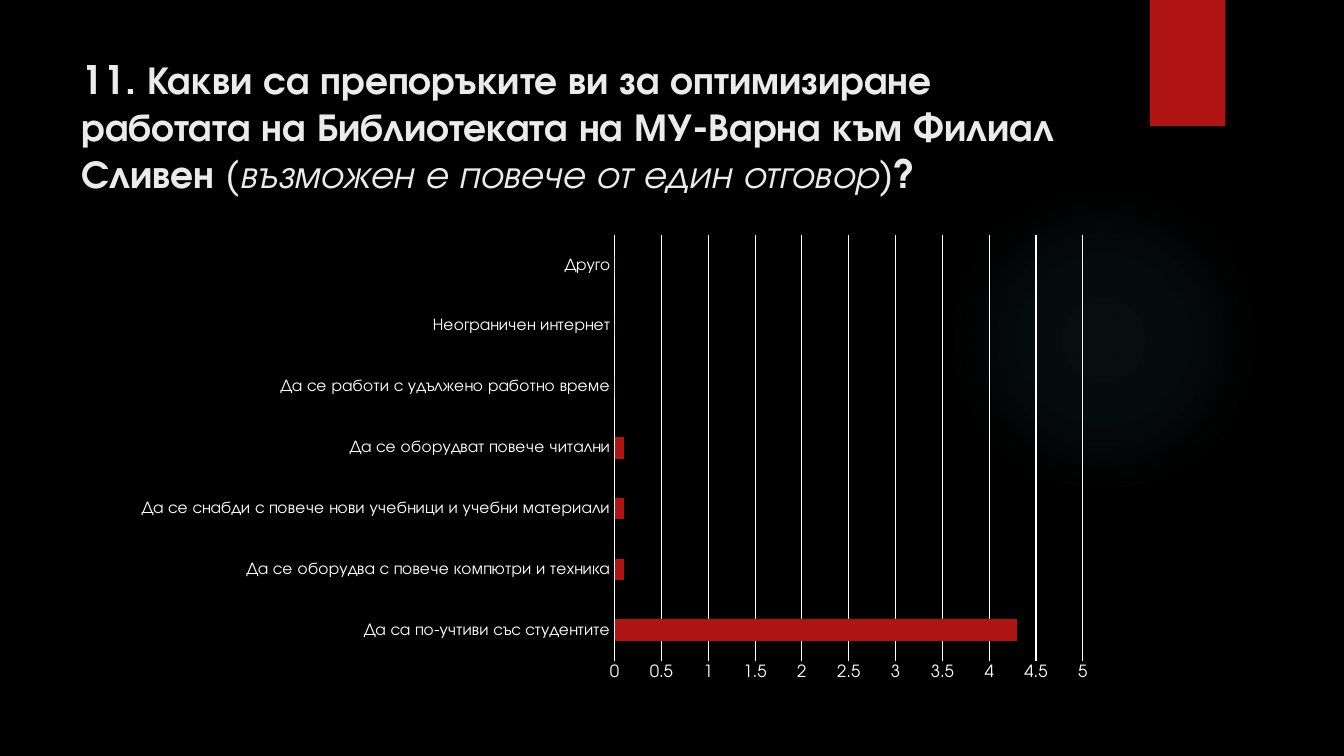
from dataclasses import dataclass

from lxml import etree
from pptx import Presentation
from pptx.chart.data import CategoryChartData
from pptx.dml.color import RGBColor
from pptx.enum.chart import XL_CHART_TYPE, XL_TICK_MARK
from pptx.enum.shapes import MSO_SHAPE
from pptx.enum.text import MSO_ANCHOR, MSO_AUTO_SIZE, PP_ALIGN
from pptx.oxml import parse_xml
from pptx.oxml.ns import nsdecls, qn
from pptx.util import Cm, Pt

BAR_CLUSTERED = XL_CHART_TYPE.BAR_CLUSTERED
NO_TICK = XL_TICK_MARK.NONE
RECTANGLE, OVAL = MSO_SHAPE.RECTANGLE, MSO_SHAPE.OVAL
TOP, LEFT = MSO_ANCHOR.TOP, PP_ALIGN.LEFT
NO_AUTOFIT = MSO_AUTO_SIZE.NONE
TITLE_ONLY = 5


@dataclass(frozen=True)
class Theme:
    background: str = "000000"
    accent: str = "B01513"
    glow: str = "50B9C1"
    title: str = "EBEBEB"
    chart: str = "FFFFFF"
    font: str = "TeX Gyre Adventor"
    title_size: float = 28
    chart_size: float = 12
    line_width: float = 0.75


@dataclass(frozen=True)
class Box:
    left: float
    top: float
    width: float
    height: float

    def lengths(self):
        return Cm(self.left), Cm(self.top), Cm(self.width), Cm(self.height)


@dataclass(frozen=True)
class TitlePart:
    text: str
    bold: bool = False
    italic: bool = False


@dataclass(frozen=True)
class Answer:
    label: str
    value: float


THEME = Theme()
GLOW_BOX = Box(23.9, 4.65, 7.82, 7.82)
RIBBON_BOX = Box(28.98, 0, 1.9, 3.18)
TITLE_BOX = Box(1.8, 1.27, 26.14, 3.89)
CHART_BOX = Box(3.07, 5.69, 24.84, 11.66)
PLOT_LAYOUT = {"x": 0.5, "y": 0.02, "w": 0.475, "h": 0.92}
GLOW_STOPS = ((0, 7), (36, 6), (69, 0))  # position and opacity in percent

TITLE_PARTS = (
    TitlePart("11. Какви са препоръките ви за оптимизиране работата на "
              "Библиотеката на МУ-Варна към Филиал Сливен ", bold=True),
    TitlePart("("),
    TitlePart("възможен е повече от един отговор", italic=True),
    TitlePart(")"),
    TitlePart("?", bold=True),
)
ANSWERS = (
    Answer("Да са по-учтиви със студентите", 4.3),
    Answer("Да се оборудва с повече компютри и техника", 0.1),
    Answer("Да се снабди с повече нови учебници и учебни материали", 0.1),
    Answer("Да се оборудват повече читални", 0.1),
    Answer("Да се работи с удължено работно време", 0),
    Answer("Неограничен интернет", 0),
    Answer("Друго", 0),
)


def format_font(font, *, size: float, color: str, bold=False, italic=False) -> None:
    font.name = THEME.font
    font.size = Pt(size)
    font.bold = bold
    font.italic = italic
    font.color.rgb = RGBColor.from_string(color)


def add_text(paragraph, text: str, **font_format) -> None:
    run = paragraph.add_run()
    run.text = text
    format_font(run.font, **font_format)


def add_plain_shape(slide, kind, box: Box, color: str):
    shape = slide.shapes.add_shape(kind, *box.lengths())
    shape.shadow.inherit = False
    shape.fill.solid()
    shape.fill.fore_color.rgb = RGBColor.from_string(color)
    shape.line.fill.background()
    return shape


def fade_from_center(shape, color: str) -> None:
    stops = "".join(
        f'<a:gs pos="{position * 1000}"><a:srgbClr val="{color}">'
        f'<a:alpha val="{opacity * 1000}"/></a:srgbClr></a:gs>'
        for position, opacity in GLOW_STOPS)
    gradient = parse_xml(
        f'<a:gradFill {nsdecls("a")}><a:gsLst>{stops}</a:gsLst><a:path path="circle">'
        '<a:fillToRect l="50000" t="50000" r="50000" b="50000"/></a:path></a:gradFill>')
    properties = shape._element.spPr
    properties.replace(properties.find(qn("a:solidFill")), gradient)


def format_line(line) -> None:
    line.color.rgb = RGBColor.from_string(THEME.chart)
    line.width = Pt(THEME.line_width)


def place_plot(chart) -> None:
    plot_area = chart._chartSpace.chart.plotArea
    for old_layout in plot_area.findall(qn("c:layout")):
        plot_area.remove(old_layout)
    layout = etree.Element(qn("c:layout"))
    manual = etree.SubElement(layout, qn("c:manualLayout"))
    settings = {"layoutTarget": "inner", "xMode": "edge", "yMode": "edge", **PLOT_LAYOUT}
    for name, value in settings.items():
        etree.SubElement(manual, qn(f"c:{name}")).set("val", str(value))
    plot_area.insert(0, layout)


def fill_title(title) -> None:
    title.left, title.top, title.width, title.height = TITLE_BOX.lengths()
    frame = title.text_frame
    frame.word_wrap = True
    frame.auto_size = NO_AUTOFIT
    frame.vertical_anchor = TOP
    paragraph = frame.paragraphs[0]
    paragraph.alignment = LEFT
    for part in TITLE_PARTS:
        add_text(paragraph, part.text, size=THEME.title_size, color=THEME.title,
                 bold=part.bold, italic=part.italic)


def add_answer_chart(slide) -> None:
    data = CategoryChartData()
    data.categories = [answer.label for answer in ANSWERS]
    data.add_series("Series 1", [answer.value for answer in ANSWERS])
    chart = slide.shapes.add_chart(BAR_CLUSTERED, *CHART_BOX.lengths(), data).chart
    chart.has_legend = False
    chart.has_title = False
    format_font(chart.font, size=THEME.chart_size, color=THEME.chart)
    place_plot(chart)

    # Bars
    plot = chart.plots[0]
    plot.gap_width = 182
    plot.vary_by_categories = False
    bars = plot.series[0].format
    bars.fill.solid()
    bars.fill.fore_color.rgb = RGBColor.from_string(THEME.accent)

    # Axes
    for axis in (chart.category_axis, chart.value_axis):
        axis.major_tick_mark = axis.minor_tick_mark = NO_TICK
        format_font(axis.tick_labels.font, size=THEME.chart_size, color=THEME.chart)
    format_line(chart.category_axis.format.line)
    value_axis = chart.value_axis
    value_axis.minimum_scale, value_axis.maximum_scale = 0, 5
    value_axis.major_unit = 0.5
    value_axis.tick_labels.number_format = "General"
    value_axis.tick_labels.number_format_is_linked = False
    value_axis.format.line.fill.background()
    format_line(value_axis.major_gridlines.format.line)


def main() -> None:
    presentation = Presentation()
    presentation.slide_width, presentation.slide_height = Cm(33.87), Cm(19.05)
    slide = presentation.slides.add_slide(presentation.slide_layouts[TITLE_ONLY])

    # Backdrop
    slide.background.fill.solid()
    slide.background.fill.fore_color.rgb = RGBColor.from_string(THEME.background)
    fade_from_center(add_plain_shape(slide, OVAL, GLOW_BOX, THEME.glow), THEME.glow)
    add_plain_shape(slide, RECTANGLE, RIBBON_BOX, THEME.accent)

    # Content
    fill_title(slide.shapes.title)
    add_answer_chart(slide)
    presentation.save("out.pptx")


if __name__ == "__main__":
    main()
